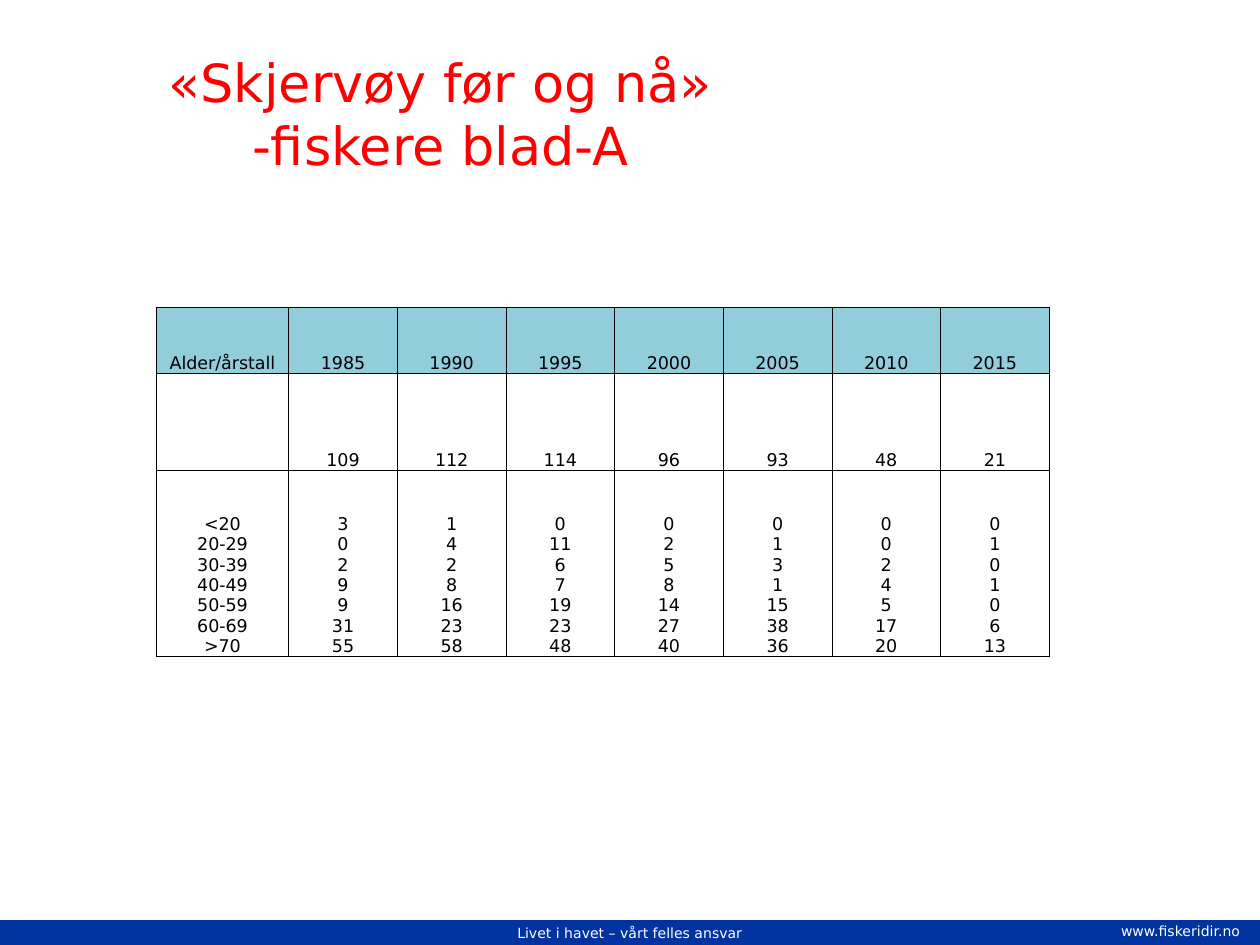
from lxml.etree import SubElement
from pptx import Presentation
from pptx.dml.color import RGBColor
from pptx.enum.shapes import MSO_SHAPE
from pptx.enum.text import MSO_ANCHOR, PP_ALIGN
from pptx.oxml.ns import qn
from pptx.util import Cm, Pt

FONT = "DejaVu Sans"
COLORS = {"title": "FF0000", "bar": "0033A0", "edge": "00329C",
          "head": "92CDDC", "text": "000000", "light": "FFFFFF"}

TITLE = ["«Skjervøy før og nå»", "-fiskere blad-A"]
MOTTO = "Livet i havet – vårt felles ansvar"
SITE = "www.fiskeridir.no"

AGES = ["<20", "20-29", "30-39", "40-49", "50-59", "60-69", ">70"]
YEARS = [  # year, total, count in each age group
    (1985, 109, [3, 0, 2, 9, 9, 31, 55]),
    (1990, 112, [1, 4, 2, 8, 16, 23, 58]),
    (1995, 114, [0, 11, 6, 7, 19, 23, 48]),
    (2000, 96, [0, 2, 5, 8, 14, 27, 40]),
    (2005, 93, [0, 1, 3, 1, 15, 38, 36]),
    (2010, 48, [0, 0, 2, 4, 5, 17, 20]),
    (2015, 21, [0, 1, 0, 1, 0, 6, 13]),
]
HEIGHTS = [1.33, 1.96, 3.75]
FIRST, WIDTH = 2.67, 2.19


def color(name):
    return RGBColor.from_string(COLORS[name])


def style(para, size, name, align=PP_ALIGN.CENTER):
    para.alignment = align
    para.font.name = FONT
    para.font.size = Pt(size)
    para.font.color.rgb = color(name)


def border(cell):
    props = cell._tc.get_or_add_tcPr()
    for side in ("lnL", "lnR", "lnT", "lnB"):
        line = SubElement(props, qn(f"a:{side}"), w=str(Pt(0.5)))
        fill = SubElement(line, qn("a:solidFill"))
        SubElement(fill, qn("a:srgbClr"), val=COLORS["text"])


def fill_cell(cell, lines, head):
    border(cell)
    if head:
        cell.fill.solid()
        cell.fill.fore_color.rgb = color("head")
    else:
        cell.fill.background()
    cell.vertical_anchor = MSO_ANCHOR.BOTTOM
    cell.margin_left = cell.margin_right = cell.margin_top = Cm(0.03)
    cell.margin_bottom = 0
    cell.text_frame.text = "\n".join(str(line) for line in lines)
    for para in cell.text_frame.paragraphs:
        style(para, 10, "text")


def add_bar(slide):
    bar = slide.shapes.add_shape(MSO_SHAPE.RECTANGLE, 0, Cm(18.57),
                                 Cm(25.4), Cm(0.48))
    bar.shadow.inherit = False
    bar.fill.solid()
    bar.fill.fore_color.rgb = color("bar")
    bar.line.color.rgb = color("edge")
    bar.line.width = Pt(0.75)
    frame = bar.text_frame
    frame.vertical_anchor = MSO_ANCHOR.MIDDLE
    frame.text = MOTTO
    style(frame.paragraphs[0], 8, "light")

    site = slide.shapes.add_textbox(Cm(22.35), Cm(18.47), Cm(3.05), Cm(0.6))
    site.text_frame.text = SITE
    style(site.text_frame.paragraphs[0], 8, "light", PP_ALIGN.LEFT)


def add_title(slide):
    box = slide.shapes.add_textbox(Cm(1.22), Cm(0.81), Cm(15.32), Cm(2.92))
    frame = box.text_frame
    frame.word_wrap = True
    frame.vertical_anchor = MSO_ANCHOR.MIDDLE
    para = frame.paragraphs[0]
    para.add_run().text = TITLE[0]
    para.add_line_break()
    para.add_run().text = TITLE[1]
    style(para, 30, "title")


def add_ages(slide):
    cols = [(["Alder/årstall"], [], AGES)]
    cols += [([year], [total], counts) for year, total, counts in YEARS]
    shape = slide.shapes.add_table(
        len(HEIGHTS), len(cols), Cm(3.15), Cm(6.2),
        Cm(FIRST + WIDTH * len(YEARS)), Cm(sum(HEIGHTS)))
    table = shape.table
    table.first_row = table.horz_banding = False
    for row, height in zip(table.rows, HEIGHTS):
        row.height = Cm(height)
    for c, col in enumerate(cols):
        table.columns[c].width = Cm(WIDTH if c else FIRST)
        for r, lines in enumerate(col):
            fill_cell(table.cell(r, c), lines, r == 0)


def main():
    deck = Presentation()
    deck.slide_width, deck.slide_height = Cm(25.4), Cm(19.05)
    slide = deck.slides.add_slide(deck.slide_layouts[6])
    add_bar(slide)
    add_title(slide)
    add_ages(slide)
    deck.save("out.pptx")


if __name__ == "__main__":
    main()
